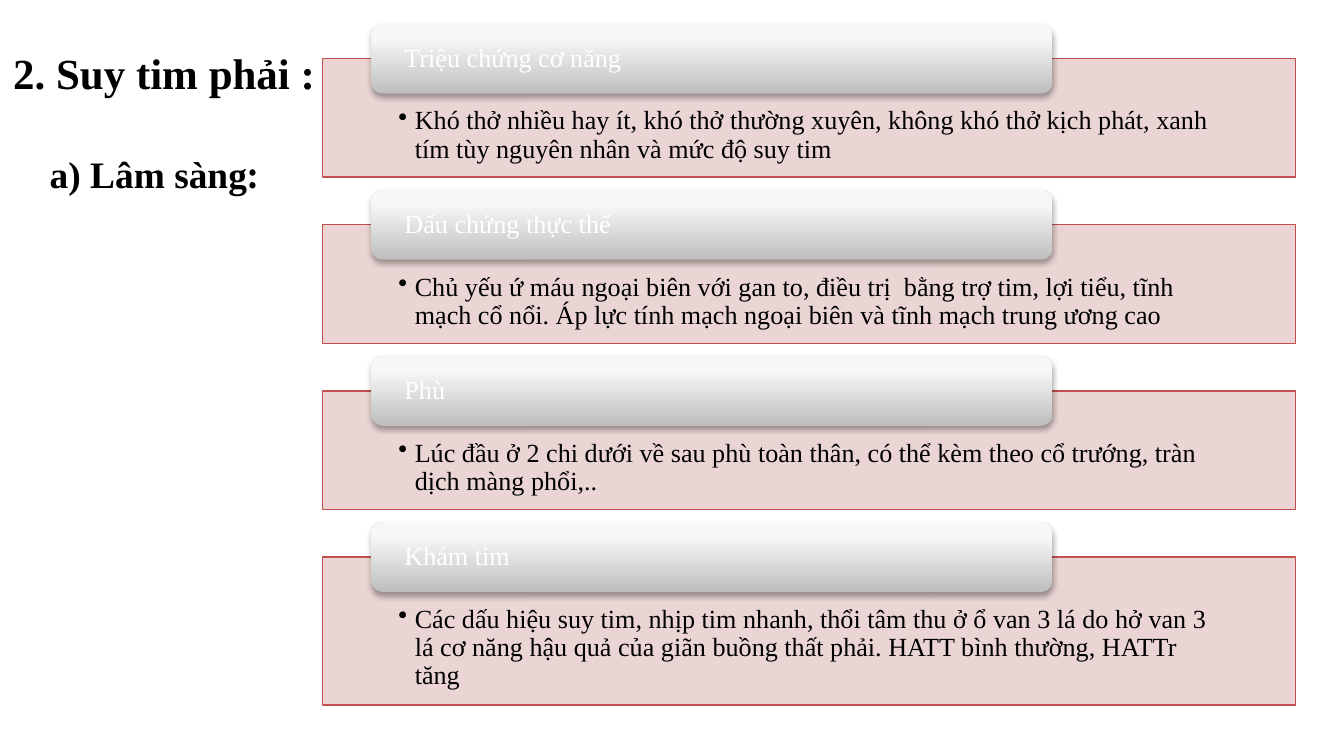
from dataclasses import dataclass

from lxml.etree import SubElement
from pptx import Presentation
from pptx.dml.color import RGBColor as Color
from pptx.enum.shapes import MSO_SHAPE as Preset
from pptx.enum.text import MSO_ANCHOR as Anchor, PP_ALIGN as Align
from pptx.oxml.ns import qn
from pptx.util import Cm, Pt


@dataclass(frozen=True)
class Theme:
    serif: str = "Times New Roman"
    sans: str = "Noto Sans CJK KR"
    ink: str = "000000"
    light: str = "FFFFFF"
    panel: str = "E8D0D0"
    panel_opacity: int = 90
    border: str = "C0504D"
    tab_stops: tuple = ((0, "BEBEBE"), (80, "F7F7F7"), (100, "F8F8F8"))
    shadow_opacity: int = 35
    title_size: float = 23
    subtitle_size: float = 20
    colon_size: float = 18
    text_size: float = 14


def add_color(parent, value, opacity=100):
    color = SubElement(parent, qn("a:srgbClr"), val=value)
    if opacity < 100:
        SubElement(color, qn("a:alpha"), val=str(opacity * 1000))


class SlideBuilder:
    def __init__(self, slide, theme):
        self.slide = slide
        self.theme = theme

    def add_span(self, para, text, size, color, bold=False, font=None):
        span = para.add_run()
        span.text = text
        span.font.name = font or self.theme.serif
        span.font.size = Pt(size)
        span.font.bold = bold
        span.font.color.rgb = Color.from_string(color)

    def heading(self, left, top, width, height, spans, anchor=Anchor.TOP):
        box = self.slide.shapes.add_textbox(Cm(left), Cm(top), Cm(width), Cm(height))
        frame = box.text_frame
        frame.word_wrap = True
        frame.vertical_anchor = anchor
        for text, size, font in spans:
            self.add_span(frame.paragraphs[0], text, size, self.theme.ink, True, font)

    def block(self, preset, left, top, width, height, anchor, insets):
        shape = self.slide.shapes.add_shape(
            preset, Cm(left), Cm(top), Cm(width), Cm(height))
        shape.shadow.inherit = False
        frame = shape.text_frame
        frame.word_wrap = True
        frame.vertical_anchor = anchor
        side, upper, lower = insets
        frame.margin_left = frame.margin_right = Cm(side)
        frame.margin_top, frame.margin_bottom = Cm(upper), Cm(lower)
        para = frame.paragraphs[0]
        para.alignment = Align.LEFT
        para.line_spacing = 0.9
        return shape, para

    def panel(self, left, top, width, height, text):
        theme = self.theme
        shape, para = self.block(Preset.RECTANGLE, left, top, width, height,
                                 Anchor.TOP, (1.43, 0.92, 0.28))
        shape.fill.solid()
        shape.fill.fore_color.rgb = Color.from_string(theme.panel)
        fill_color = shape._element.spPr.find(qn("a:solidFill"))[0]
        SubElement(fill_color, qn("a:alpha"), val=str(theme.panel_opacity * 1000))
        shape.line.color.rgb = Color.from_string(theme.border)
        shape.line.width = Pt(0.75)
        props = para._p.get_or_add_pPr()
        props.set("marL", str(Cm(0.31)))
        props.set("indent", str(-Cm(0.31)))
        SubElement(props, qn("a:buChar"), char="•")
        self.add_span(para, text, theme.text_size, theme.ink)

    def tab(self, left, top, width, height, text):
        theme = self.theme
        shape, para = self.block(Preset.ROUNDED_RECTANGLE, left, top, width, height,
                                 Anchor.MIDDLE, (0.56, 0, 0))
        shape.line.fill.background()
        shape.fill.gradient()
        shape.fill.gradient_angle = 90
        props = shape._element.spPr
        stops = props.find(qn("a:gradFill")).find(qn("a:gsLst"))
        for stop in list(stops):
            stops.remove(stop)
        for position, color in theme.tab_stops:
            stop = SubElement(stops, qn("a:gs"), pos=str(position * 1000))
            add_color(stop, color)
        shadow = SubElement(props.find(qn("a:effectLst")), qn("a:outerShdw"),
                            blurRad=str(Pt(3.1)), dist=str(Pt(1.8)),
                            dir="5400000", rotWithShape="0")
        add_color(shadow, theme.ink, theme.shadow_opacity)
        self.add_span(para, text, theme.text_size, theme.light)


SECTIONS = (
    ("Triệu chứng cơ năng", 2.24,
     "Khó thở nhiều hay ít, khó thở thường xuyên, không khó thở kịch phát, "
     "xanh tím tùy nguyên nhân và mức độ suy tim"),
    ("Dấu chứng thực thể", 2.24,
     "Chủ yếu ứ máu ngoại biên với gan to, điều trị  bằng trợ tim, lợi tiểu, "
     "tĩnh mạch cổ nổi. Áp lực tính mạch ngoại biên và tĩnh mạch trung ương cao"),
    ("Phù", 2.24,
     "Lúc đầu ở 2 chi dưới về sau phù toàn thân, có thể kèm theo cổ trướng, "
     "tràn dịch màng phổi,.."),
    ("Khám tim", 2.8,
     "Các dấu hiệu suy tim, nhịp tim nhanh, thổi tâm thu ở ổ van 3 lá do hở "
     "van 3 lá cơ năng hậu quả của giãn buồng thất phải. HATT bình thường, "
     "HATTr tăng"),
)


def main():
    deck = Presentation()
    deck.slide_width, deck.slide_height = Cm(25.4), Cm(14.29)
    theme = Theme()
    page = SlideBuilder(deck.slides.add_slide(deck.slide_layouts[6]), theme)

    page.heading(0, 0.74, 7.19, 1.27,
                 [("2. Suy tim phải :", theme.title_size, theme.serif)], Anchor.MIDDLE)
    first_top, gap, overlap = 1.11, 0.9, 0.66
    top = first_top
    for title, height, text in SECTIONS:
        page.panel(6.1, top, 18.39, height, text)
        page.tab(7.02, top - overlap, 12.87, 1.32, title)
        top += height + gap
    page.heading(0.69, 2.74, 4.6, 1.12,
                 [("a) Lâm sàng", theme.subtitle_size, theme.serif),
                  (":", theme.colon_size, theme.sans)])
    deck.save("out.pptx")


if __name__ == "__main__":
    main()
